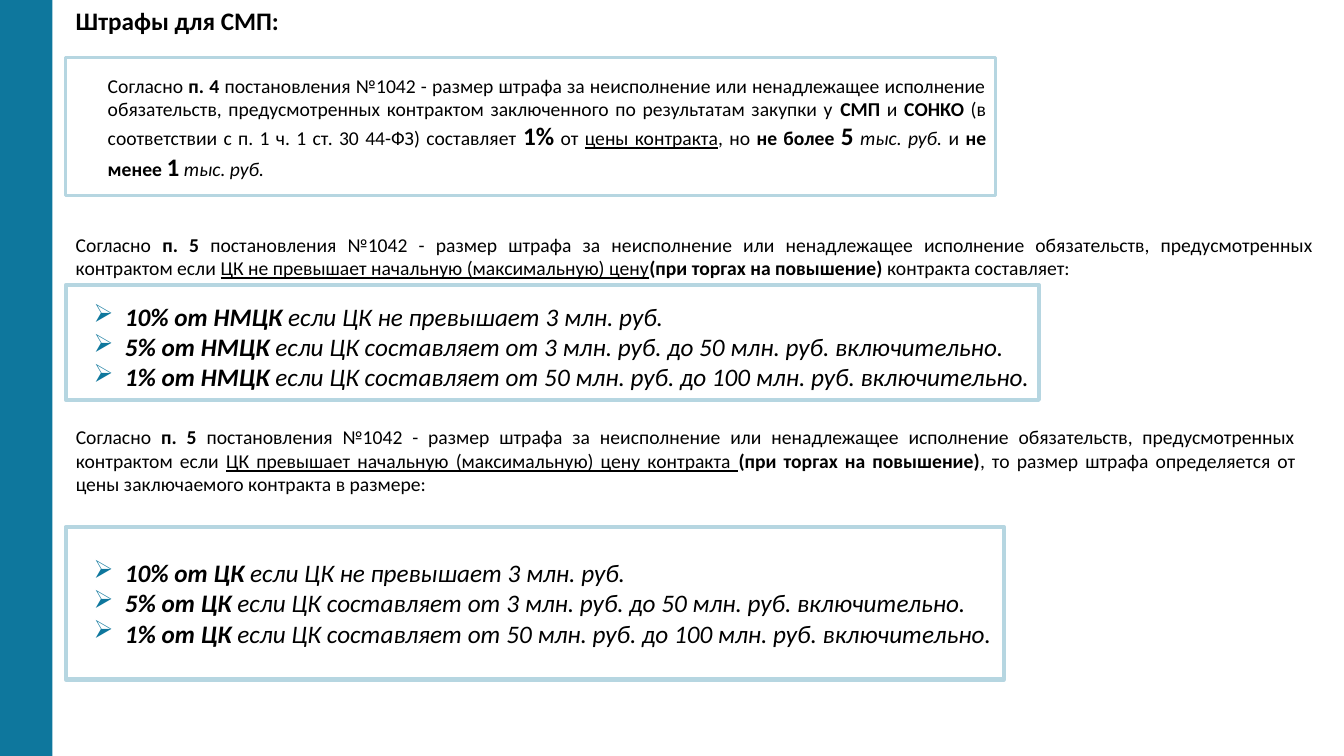
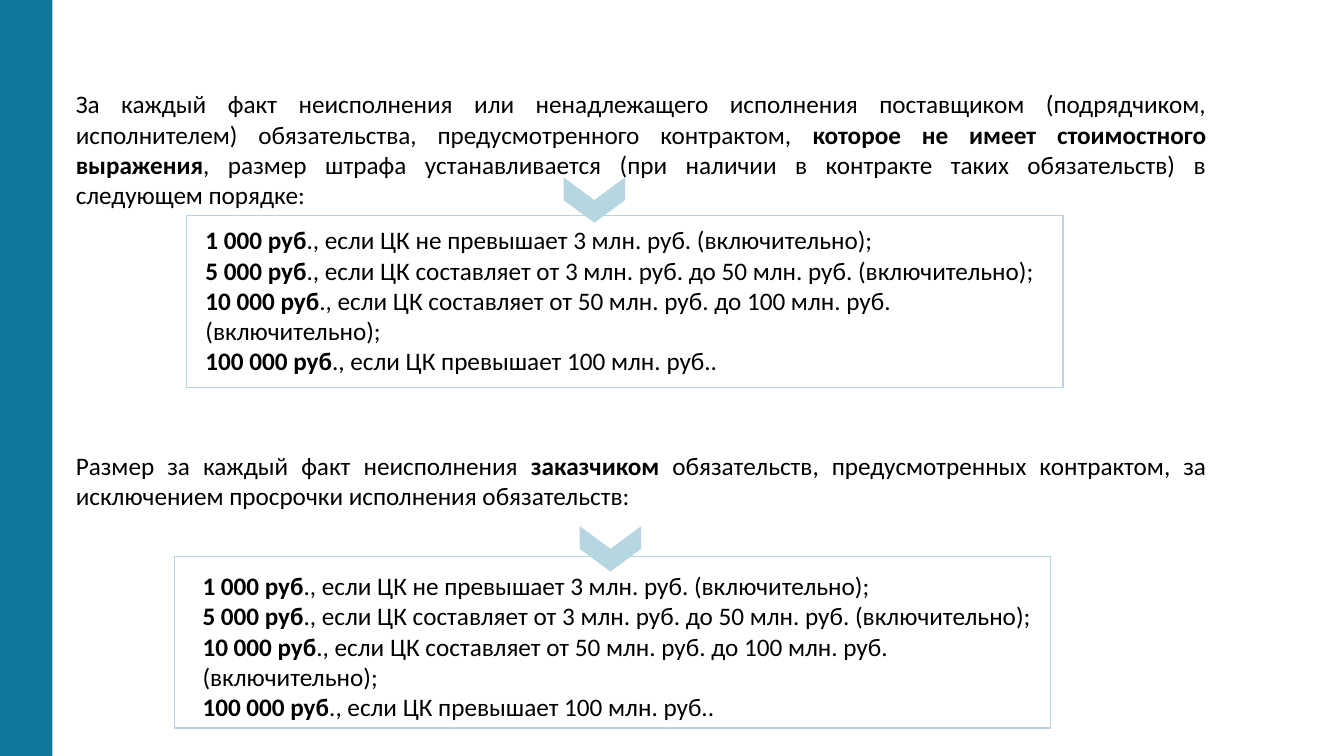
from dataclasses import dataclass
from typing import NamedTuple

from lxml.etree import SubElement
from pptx import Presentation
from pptx.dml.color import RGBColor
from pptx.enum.shapes import MSO_SHAPE as Preset
from pptx.enum.text import MSO_AUTO_SIZE as AutoSize, PP_ALIGN as Align
from pptx.oxml.ns import qn
from pptx.util import Inches, Pt

TEAL = RGBColor(0x0E, 0x77, 0x9D)
PALE_BLUE = RGBColor(0xB6, 0xD6, 0xE1)
BLACK = RGBColor(0, 0, 0)
FONT = "Calibri"
BULLET = "➢"
BULLET_INDENT = Inches(0.31)

# The grid has 100 columns and 100 rows.
WIDTH, HEIGHT = Inches(13.333), Inches(7.5)
COLUMN, ROW = WIDTH / 100, HEIGHT / 100
MARGIN = 4.9


class Cell(NamedTuple):
    """Columns and rows of the grid."""
    left: float
    top: float
    width: float
    height: float

    def lengths(self) -> tuple[int, ...]:
        units = (COLUMN, ROW, COLUMN, ROW)
        return tuple(round(value * unit) for value, unit in zip(self, units))


class Span(NamedTuple):
    text: str
    bold: bool = False
    italic: bool = False
    underline: bool = False
    size: int | None = None


Spans = list[Span]


@dataclass(frozen=True)
class TextBlock:
    cell: Cell
    paragraphs: list[Spans]
    size: int = 18
    align: Align | None = None
    bulleted: bool = False
    space_after: int = 0


@dataclass(frozen=True)
class Frame:
    cell: Cell
    line_width: float


@dataclass(frozen=True)
class FineGroup:
    """An introduction, then a chevron pointing at a framed list."""
    intro: TextBlock
    frame: Frame
    chevron: Cell
    amounts: Cell


def add_preset(slide, preset: Preset, cell: Cell, fill: RGBColor | None = None):
    shape = slide.shapes.add_shape(preset, *cell.lengths())
    shape.shadow.inherit = False
    shape.line.fill.background()
    if fill is None:
        shape.fill.background()
    else:
        shape.fill.solid()
        shape.fill.fore_color.rgb = fill
    return shape


def add_frame(slide, frame: Frame) -> None:
    shape = add_preset(slide, Preset.RECTANGLE, frame.cell)
    shape.line.color.rgb = PALE_BLUE
    shape.line.width = Pt(frame.line_width)


def add_bullet(paragraph) -> None:
    properties = paragraph._p.get_or_add_pPr()
    properties.set("marL", str(BULLET_INDENT))
    properties.set("indent", str(-BULLET_INDENT))
    color = SubElement(properties, qn("a:buClr"))
    SubElement(color, qn("a:srgbClr")).set("val", str(TEAL))
    SubElement(properties, qn("a:buChar")).set("char", BULLET)


def add_span(paragraph, span: Span, size: int) -> None:
    run = paragraph.add_run()
    run.text = span.text
    formats = {
        "name": FONT,
        "size": Pt(span.size or size),
        "bold": span.bold,
        "italic": span.italic,
        "underline": span.underline,
    }
    for attribute, value in formats.items():
        setattr(run.font, attribute, value)
    run.font.color.rgb = BLACK


def add_text(slide, block: TextBlock) -> None:
    frame = slide.shapes.add_textbox(*block.cell.lengths()).text_frame
    frame.word_wrap = True
    frame.auto_size = AutoSize.SHAPE_TO_FIT_TEXT
    for index, spans in enumerate(block.paragraphs):
        paragraph = frame.add_paragraph() if index else frame.paragraphs[0]
        if block.bulleted:
            add_bullet(paragraph)
        paragraph.alignment = block.align
        paragraph.space_after = Pt(block.space_after)
        for span in spans:
            add_span(paragraph, span, block.size)


def add_fine_group(slide, group: FineGroup) -> None:
    add_frame(slide, group.frame)
    add_text(slide, group.intro)
    chevron = add_preset(slide, Preset.CHEVRON, group.chevron, PALE_BLUE)
    chevron.rotation = 90
    add_text(slide, TextBlock(group.amounts, FIXED_FINES))


def new_slide(presentation):
    slide = presentation.slides.add_slide(presentation.slide_layouts[6])
    add_preset(slide, Preset.RECTANGLE, Cell(0, 0, 3.9, 100), TEAL)
    return slide


PRICE_RANGES = [
    "если ЦК не превышает 3 млн. руб.",
    "если ЦК составляет от 3 млн. руб. до 50 млн. руб.",
    "если ЦК составляет от 50 млн. руб. до 100 млн. руб.",
]


def percent_fines(base: str) -> list[Spans]:
    endings = ("", " включительно.", " включительно.")
    return [
        [Span(f"{rate}% от {base}", bold=True, italic=True),
         Span(f" {price_range}{ending}", italic=True)]
        for rate, price_range, ending in zip((10, 5, 1), PRICE_RANGES, endings)
    ]


FIXED_FINES = [
    [Span(f"{amount} руб", bold=True), Span(f"., {condition}")]
    for amount, condition in zip(
        ("1 000", "5 000", "10 000", "100 000"),
        [f"{price_range} (включительно);" for price_range in PRICE_RANGES]
        + ["если ЦК превышает 100 млн. руб.."],
    )
]

FINE_SIZE = (" постановления №1042 - размер штрафа за неисполнение или "
             "ненадлежащее исполнение обязательств, предусмотренных контрактом ")


def clause(number: int, continuation: str) -> Spans:
    return [Span("Согласно "), Span(f"п. {number}", bold=True),
            Span(FINE_SIZE + continuation)]


SMALL_BUSINESS_FRAMES = [
    Frame(Cell(MARGIN, 7.6, 69.2, 18.3), 2.25),
    Frame(Cell(MARGIN, 37.7, 72.4, 15.2), 3),
    Frame(Cell(MARGIN, 69.7, 69.8, 20.2), 3),
]

SMALL_BUSINESS_TEXTS = [
    TextBlock(Cell(MARGIN, 0, 30, 5.3), [[Span("Штрафы для СМП:", bold=True)]]),
    TextBlock(
        Cell(7.28, 9.07, 66.83, 15.73),
        [clause(4, "заключенного по результатам закупки у ") + [
            Span("СМП", bold=True),
            Span(" и "),
            Span("СОНКО", bold=True),
            Span(" (в соответствии с п. 1 ч. 1 ст. 30 44-ФЗ) составляет "),
            Span("1%", bold=True, size=18),
            Span(" от "),
            Span("цены контракта", underline=True),
            Span(", но "),
            Span("не более ", bold=True),
            Span("5", bold=True, size=18),
            Span(" "),
            Span("тыс. руб.", italic=True),
            Span(" и "),
            Span("не менее ", bold=True),
            Span("1", bold=True, size=18),
            Span(" "),
            Span("тыс. руб.", italic=True),
        ]],
        size=14, align=Align.JUSTIFY, space_after=6,
    ),
    TextBlock(
        Cell(MARGIN, 30.13, 93.6, 7.6),
        [clause(5, "если ") + [
            Span("ЦК не превышает начальную (максимальную) цену", underline=True),
            Span("(при торгах на повышение) ", bold=True),
            Span("контракта составляет:"),
        ]],
        size=14, align=Align.JUSTIFY,
    ),
    TextBlock(Cell(6.23, 39.2, 82.4, 13.5), percent_fines("НМЦК"), bulleted=True),
    TextBlock(
        Cell(MARGIN, 55.6, 92.25, 10.8),
        [clause(5, "если ") + [
            Span("ЦК превышает начальную (максимальную) цену контракта ",
                 underline=True),
            Span("(при торгах на повышение)", bold=True),
            Span(", то размер штрафа определяется от цены заключаемого "
                 "контракта в размере:"),
        ]],
        size=14, align=Align.JUSTIFY,
    ),
    TextBlock(Cell(6.23, 73.07, 81.5, 13.5), percent_fines("ЦК"), bulleted=True),
]

FIXED_FINE_GROUPS = [
    FineGroup(
        TextBlock(
            Cell(MARGIN, 11.07, 85.6, 17.5),
            [[Span("За каждый факт неисполнения или ненадлежащего исполнения "
                   "поставщиком (подрядчиком, исполнителем) обязательства, "
                   "предусмотренного контрактом, "),
              Span("которое не имеет стоимостного выражения", bold=True),
              Span(", размер штрафа устанавливается (при наличии в контракте "
                   "таких обязательств) в следующем порядке:")]],
            align=Align.JUSTIFY,
        ),
        Frame(Cell(13.88, 28.53, 65.2, 22.7), 1),
        chevron=Cell(42.53, 22.4, 3.38, 8.13),
        amounts=Cell(14.55, 29.07, 63.83, 21.6),
    ),
    FineGroup(
        TextBlock(
            Cell(MARGIN, 58.93, 85.6, 9.5),
            [[Span("Размер за каждый факт неисполнения "),
              Span("заказчиком", bold=True),
              Span(" обязательств, предусмотренных контрактом, за исключением "
                   "просрочки исполнения обязательств:")]],
            align=Align.JUSTIFY,
        ),
        Frame(Cell(12.98, 73.6, 65.2, 22.7), 1),
        chevron=Cell(43.73, 68.53, 3.38, 8.13),
        amounts=Cell(14.33, 74.8, 63.83, 21.6),
    ),
]


def main() -> None:
    presentation = Presentation()
    presentation.slide_width, presentation.slide_height = WIDTH, HEIGHT

    small_business = new_slide(presentation)
    for frame in SMALL_BUSINESS_FRAMES:
        add_frame(small_business, frame)
    for block in SMALL_BUSINESS_TEXTS:
        add_text(small_business, block)

    fixed_fines = new_slide(presentation)
    for group in FIXED_FINE_GROUPS:
        add_fine_group(fixed_fines, group)

    presentation.save("out.pptx")


if __name__ == "__main__":
    main()
